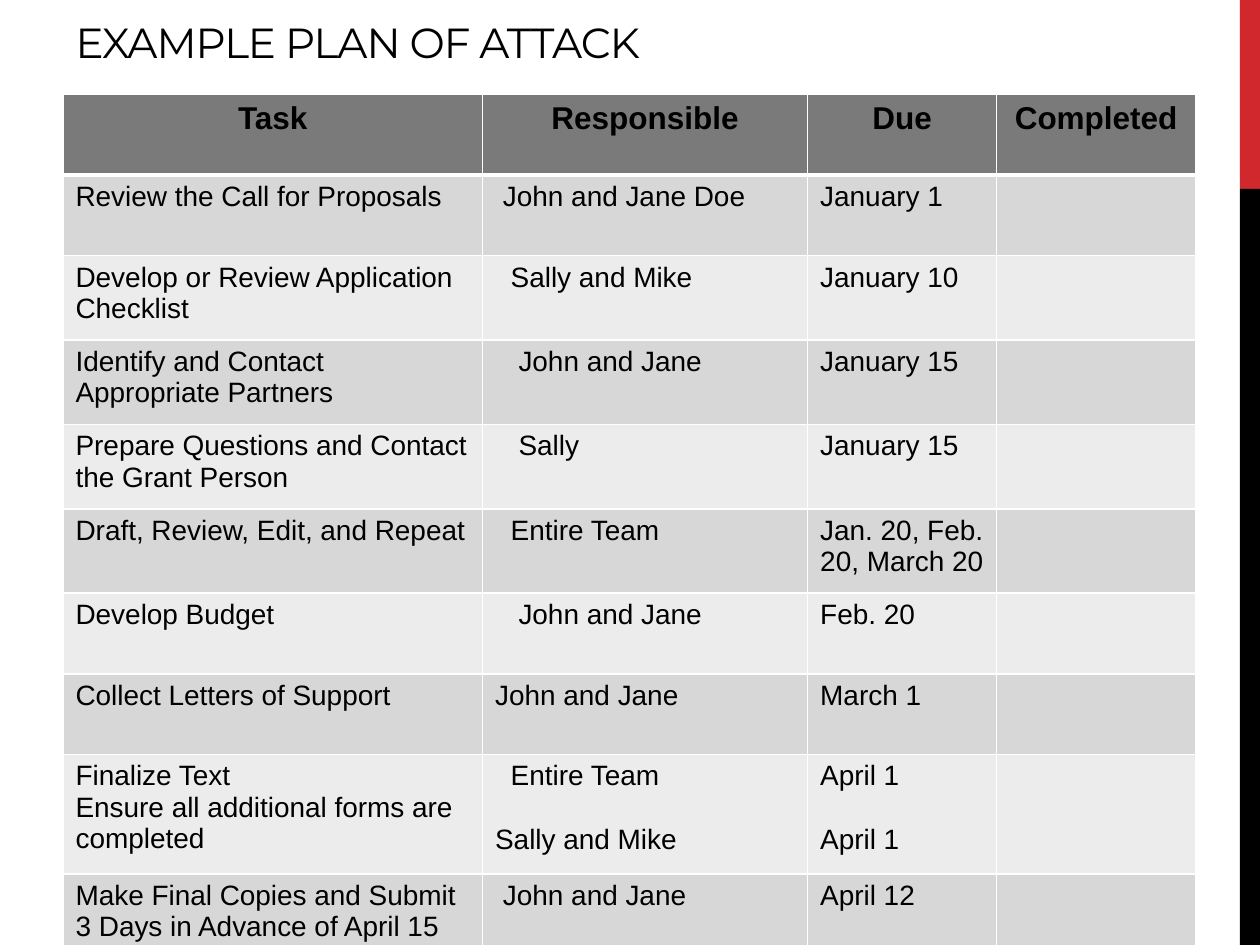
from lxml.etree import fromstring
from pptx import Presentation
from pptx.dml.color import RGBColor
from pptx.enum.shapes import MSO_SHAPE
from pptx.enum.text import MSO_ANCHOR, MSO_AUTO_SIZE, PP_ALIGN
from pptx.util import Inches, Pt

TITLE = "EXAMPLE PLAN OF ATTACK"
HEADER = ["Task", "Responsible", "Due", "Completed"]
# Task lines, (responsible, indent steps) pairs, due dates, row height
TASKS = [
    (["Review the Call for Proposals"], [("John and Jane Doe", 1)], ["January 1"], 0.64),
    (["Develop or Review Application Checklist"], [("Sally and Mike", 2)], ["January 10"], 0.67),
    (["Identify and Contact Appropriate Partners"], [("John and Jane", 3)], ["January 15"], 0.67),
    (["Prepare Questions and Contact the Grant Person"], [("Sally", 3)], ["January 15"], 0.67),
    (["Draft, Review, Edit, and Repeat"], [("Entire Team", 2)], ["Jan. 20, Feb. 20, March 20"], 0.67),
    (["Develop Budget"], [("John and Jane", 3)], ["Feb. 20"], 0.64),
    (["Collect Letters of Support"], [("John and Jane", 0)], ["March 1"], 0.64),
    (["Finalize Text", "Ensure all additional forms are completed"],
     [("Entire Team", 2), ("Sally and Mike", 0)], ["April 1", "April 1"], 0.95),
    (["Make Final Copies and Submit 3 Days in Advance of April 15"],
     [("John and Jane", 1)], ["April 12"], 0.67),
]
COL_WIDTHS = [3.33, 2.58, 1.5, 1.58]
HEADER_HEIGHT = 0.64
HEADER_FILL, BANDS = "7A7A7A", ["D7D7D7", "ECECEC"]
INDENT = Pt(4.45)
LINE = Pt(18.4)
A = "http://schemas.openxmlformats.org/drawingml/2006/main"


def color(hex_code):
    return RGBColor.from_string(hex_code)


def add_bar(slide, top, height, fill):
    sp = slide.shapes.add_shape(MSO_SHAPE.RECTANGLE, Inches(9.84), Inches(top),
                                Inches(0.16), Inches(height))
    sp.shadow.inherit = False
    sp.fill.solid()
    sp.fill.fore_color.rgb = color(fill)
    sp.line.fill.background()


def write(p, text, size, font="Arial", bold=False, align=PP_ALIGN.LEFT, indent=0, before=0):
    p.alignment = align
    p.space_before = before
    if indent:
        p._p.get_or_add_pPr().set("marL", str(int(indent)))
    r = p.add_run()
    r.text = text
    r.font.name, r.font.size, r.font.bold = font, Pt(size), bold
    r.font.color.rgb = color("000000")
    return r


def style_cell(cell, fill, top=1, bottom=1):
    """Set the fill and white borders, with top and bottom widths in points."""
    cell.fill.solid()
    cell.fill.fore_color.rgb = color(fill)
    tcPr = cell._tc.get_or_add_tcPr()
    for i, (side, width) in enumerate([("L", 1), ("R", 1), ("T", top), ("B", bottom)]):
        tcPr.insert(i, fromstring(
            f'<a:ln{side} xmlns:a="{A}" w="{Pt(width)}"><a:solidFill>'
            f'<a:srgbClr val="FFFFFF"/></a:solidFill></a:ln{side}>'))


def write_lines(cell, lines, gap=0):
    """Write (text, indent steps) pairs as paragraphs, gap apart."""
    tf = cell.text_frame
    for i, (text, steps) in enumerate(lines):
        p = tf.add_paragraph() if i else tf.paragraphs[0]
        write(p, text, 16, indent=steps * INDENT, before=gap if i else 0)


def add_title(slide):
    sp = slide.shapes.title
    sp.left, sp.top, sp.width, sp.height = Inches(0.5), 0, Inches(9), Inches(0.58)
    tf = sp.text_frame
    tf.auto_size = MSO_AUTO_SIZE.NONE
    tf.vertical_anchor = MSO_ANCHOR.BOTTOM
    r = write(tf.paragraphs[0], TITLE, 24, font="Montserrat")
    r._r.get_or_add_rPr().set("spc", "-60")


def add_plan(slide):
    heights = [HEADER_HEIGHT] + [task[-1] for task in TASKS]
    table = slide.shapes.add_table(
        len(heights), len(HEADER), Inches(0.5), Inches(0.75),
        Inches(sum(COL_WIDTHS)), Inches(sum(heights))).table
    for col, width in zip(table.columns, COL_WIDTHS):
        col.width = Inches(width)
    for row, height in zip(table.rows, heights):
        row.height = Inches(height)

    for c, text in enumerate(HEADER):
        cell = table.cell(0, c)
        style_cell(cell, HEADER_FILL, bottom=3)
        write(cell.text_frame.paragraphs[0], text, 18, bold=True, align=PP_ALIGN.CENTER)
    for n, (task, people, due, _) in enumerate(TASKS, 1):
        for c in range(len(HEADER)):
            style_cell(table.cell(n, c), BANDS[(n - 1) % 2], top=3 if n == 1 else 1)
        write_lines(table.cell(n, 0), [(text, 0) for text in task])
        write_lines(table.cell(n, 1), people, gap=LINE)
        write_lines(table.cell(n, 2), [(text, 0) for text in due], gap=LINE)


def main():
    prs = Presentation()
    prs.slide_width, prs.slide_height = Inches(10), Inches(7.5)
    slide = prs.slides.add_slide(prs.slide_layouts[5])
    add_bar(slide, 0, 1.5, "D1282E")
    add_bar(slide, 1.5, 6, "000000")
    add_title(slide)
    add_plan(slide)
    prs.save("out.pptx")


if __name__ == "__main__":
    main()
